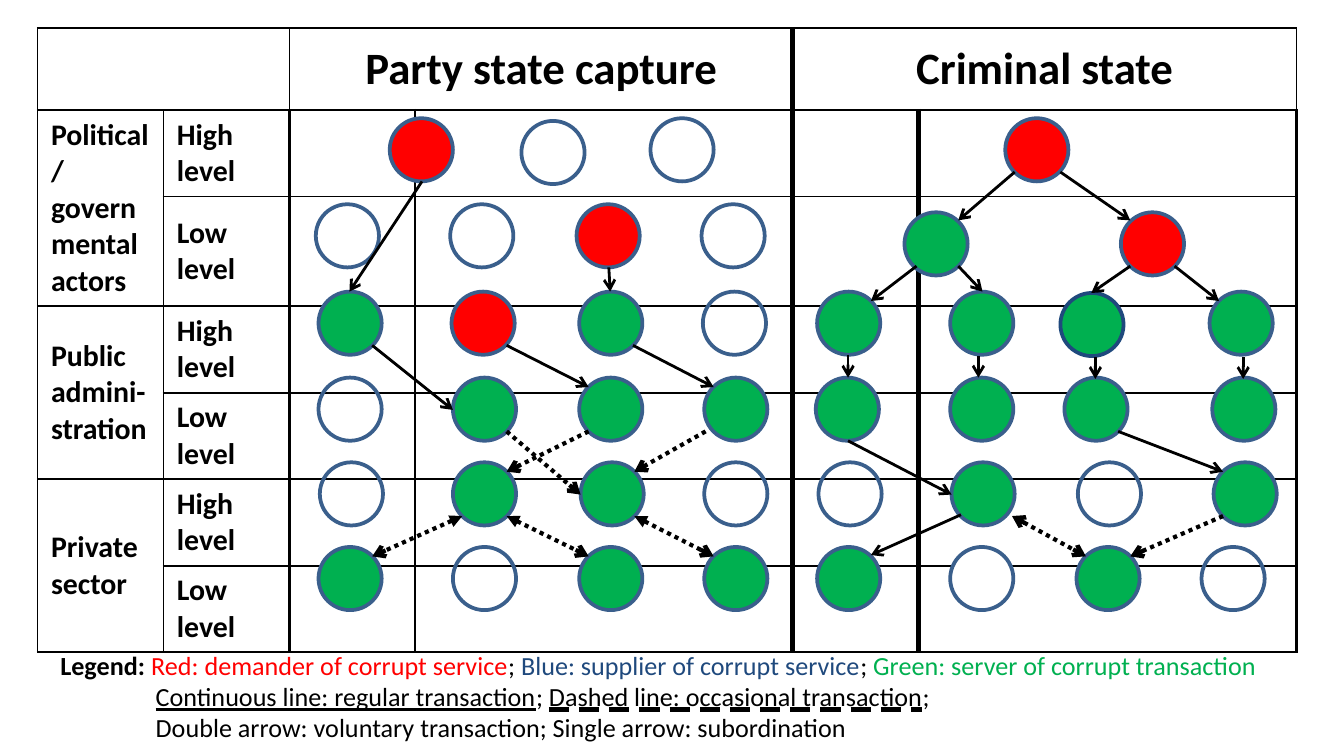
from pptx import Presentation
from pptx import util as u
from pptx.dml.color import RGBColor
from pptx.enum import dml, shapes, text
from pptx.oxml.ns import qn
from lxml import etree

PX = 9144
SLIDE = (1000, 562.5)
FONT = "Calibri"
NO_STYLE = "{2D5ABB26-0587-4C30-8999-92F81FD0307C}"
COLORS = {"black": "000000", "red": "FF0000", "green": "00B050", "white": "FFFFFF",
          "outline": "3A5F8C", "navy": "1F497D"}

TABLE = (28, 21, 937, 441)
ROW_HEIGHTS = [61] + [63] * 6
HEADERS = [(2, "Party state capture"), (6, "Criminal state")]
SECTORS = ["Political/governmental actors", "Public admini-stration", "Private sector"]
LEVELS = ["High level", "Low level"]

DIAMETER = 47
ACTORS = {
    "demander": ("red", "outline"),
    "server": ("green", "outline"),
    "dark server": ("green", "navy"),
    "inactive": (None, "outline"),
    "blank": ("white", "outline"),
}
CIRCLES = [
    (88, [(290, "demander"), (484, "inactive"), (748, "demander")]),
    (90, [(388, "inactive")]),
    (152, [(235, "inactive"), (335, "inactive"), (429, "demander"), (522, "inactive")]),
    (158, [(673, "server"), (834, "demander")]),
    (217, [(237, "server"), (336, "demander"), (431, "server"), (523, "inactive"),
           (608, "server"), (707, "server"), (900, "server")]),
    (218, [(789, "dark server")]),
    (281, [(237, "inactive"), (337, "server"), (431, "server"), (524, "server"),
           (607, "server"), (707, "server"), (792, "server"), (902, "server")]),
    (344, [(238, "inactive"), (337, "server"), (432, "server"), (524, "inactive"),
           (609, "inactive"), (708, "server"), (802, "inactive"), (903, "server")]),
    (407, [(237, "server"), (337, "inactive"), (431, "server"), (524, "server"),
           (608, "server"), (707, "blank"), (801, "server"), (894, "inactive")]),
]

REGULAR = {"width": 1.5, "dashed": False, "head": None}
OCCASIONAL = {"width": 2.25, "dashed": True, "head": None}
VOLUNTARY = {"width": 2.25, "dashed": True, "head": "triangle"}
VOLUNTARY_OPEN = {"width": 2.25, "dashed": True, "head": "arrow"}
ARROWS = [
    (REGULAR, [
        (314, 135, 260, 217), (453, 199, 454, 217), (277, 257, 337, 305),
        (377, 257, 438, 288), (471, 257, 531, 288), (755, 128, 713, 164),
        (789, 128, 841, 164), (682, 198, 648, 224), (713, 198, 731, 217),
        (841, 198, 812, 218), (874, 198, 907, 224), (631, 264, 631, 281),
        (728, 265, 728, 281), (815, 266, 815, 282), (925, 266, 925, 282),
        (631, 328, 708, 368), (832, 321, 910, 351), (715, 383, 648, 413)]),
    (OCCASIONAL, [
        (377, 321, 432, 368), (438, 321, 377, 351), (525, 321, 472, 351),
        (910, 384, 841, 414)]),
    (VOLUNTARY, [
        (344, 384, 277, 414), (377, 384, 438, 414), (472, 384, 531, 414)]),
    (VOLUNTARY_OPEN, [(753, 384, 808, 414)]),
]

LEGEND_BOX = (35, 478, 921, 81)
LEGEND_INDENT = 71
SOLID = text.MSO_UNDERLINE.SINGLE_LINE
DASHED = text.MSO_UNDERLINE.DASH_HEAVY_LINE
BREAK = None
LEGEND = [
    (0, [("Legend: ", "black", True, None),
         ("Red: demander of corrupt service", "red", False, None),
         ("; ", "black", False, None),
         ("Blue: supplier of corrupt service", "navy", False, None),
         ("; ", "black", False, None),
         ("Green: server of corrupt transaction", "green", False, None)]),
    (LEGEND_INDENT, [("Continuous line: regular transaction", "black", False, SOLID),
                     ("; ", "black", False, None),
                     ("Dashed line: occasional transaction", "black", False, DASHED),
                     (";", "black", False, None),
                     BREAK,
                     ("Double arrow: voluntary transaction; Single arrow: subordination",
                      "black", False, None)]),
]


def px(*values):
    return [round(value * PX) for value in values]


def rgb(name):
    return RGBColor.from_string(COLORS[name])


def add_run(paragraph, content, size, color="black", bold=True, underline=None):
    run = paragraph.add_run()
    run.text = content
    font = run.font
    font.name, font.size, font.bold = FONT, u.Pt(size), bold
    font.underline = underline
    font.color.rgb = rgb(color)


def set_border(cell, side, width):
    if not width:
        return
    line = etree.SubElement(cell._tc.get_or_add_tcPr(), qn(f"a:ln{side}"), w=str(u.Pt(width)))
    fill = etree.SubElement(line, qn("a:solidFill"))
    etree.SubElement(fill, qn("a:srgbClr"), val=COLORS["black"])


def vertical_width(row, edge):
    if row == 0:
        return {0: 1, 2: 1, 6: 3, 10: 1}.get(edge)
    return {0: 1, 1: 1, 2: 1.5, 6: 3, 10: 1.5}.get(edge)


def horizontal_width(edge, column):
    if edge in (2, 4, 6):
        return None if column == 0 else 1
    if edge == 0 or column < 2 and edge in (1, 7):
        return 1
    return 1.5


def fill_cell(cell, content, size, alignment=None):
    cell.vertical_anchor = text.MSO_ANCHOR.MIDDLE
    paragraph = cell.text_frame.paragraphs[0]
    paragraph.alignment = alignment
    add_run(paragraph, content, size)


def add_actor_table(slide):
    table = slide.shapes.add_table(7, 10, *px(*TABLE)).table
    table.first_row = table.horz_banding = False
    table._tbl.tblPr.find(qn("a:tableStyleId")).text = NO_STYLE
    for column in table.columns:
        column.width = px(TABLE[2] / 10)[0]
    for row, height in zip(table.rows, ROW_HEIGHTS):
        row.height = px(height)[0]
    table.cell(0, 0).merge(table.cell(0, 1))
    for column, title in HEADERS:
        table.cell(0, column).merge(table.cell(0, column + 3))
        fill_cell(table.cell(0, column), title, 24, text.PP_ALIGN.CENTER)
    for index, sector in enumerate(SECTORS):
        top = 1 + 2 * index
        table.cell(top, 0).merge(table.cell(top + 1, 0))
        fill_cell(table.cell(top, 0), sector, 16)
        for offset, level in enumerate(LEVELS):
            fill_cell(table.cell(top + offset, 1), level, 16)
    for row in range(7):
        for column in range(10):
            cell = table.cell(row, column)
            right = column + (cell.span_width if cell.is_merge_origin else 1)
            bottom = row + (cell.span_height if cell.is_merge_origin else 1)
            set_border(cell, "L", vertical_width(row, column))
            set_border(cell, "R", vertical_width(row, right))
            set_border(cell, "T", horizontal_width(row, column))
            set_border(cell, "B", horizontal_width(bottom, column))
            cell.fill.background()


def add_circle(slide, left, top, actor):
    fill, outline = ACTORS[actor]
    circle = slide.shapes.add_shape(shapes.MSO_SHAPE.OVAL, *px(left, top, DIAMETER, DIAMETER))
    circle.shadow.inherit = False
    if fill:
        circle.fill.solid()
        circle.fill.fore_color.rgb = rgb(fill)
    else:
        circle.fill.background()
    circle.line.color.rgb = rgb(outline)
    circle.line.width = u.Pt(2)


def add_arrow(slide, points, style):
    connector = slide.shapes.add_connector(shapes.MSO_CONNECTOR.STRAIGHT, *px(*points))
    connector.line.color.rgb = rgb("black")
    connector.line.width = u.Pt(style["width"])
    if style["dashed"]:
        connector.line.dash_style = dml.MSO_LINE.ROUND_DOT
    line = connector.line._get_or_add_ln()
    if style["head"]:
        etree.SubElement(line, qn("a:headEnd"), type=style["head"])
    etree.SubElement(line, qn("a:tailEnd"), type="arrow")
    etree.SubElement(connector._element.spPr, qn("a:effectLst"))


def add_legend(slide):
    frame = slide.shapes.add_textbox(*px(*LEGEND_BOX)).text_frame
    frame.word_wrap = True
    for index, (indent, runs) in enumerate(LEGEND):
        paragraph = frame.add_paragraph() if index else frame.paragraphs[0]
        paragraph._p.get_or_add_pPr().set("marL", str(px(indent)[0]))
        for run in runs:
            if run is BREAK:
                paragraph.add_line_break()
                continue
            content, color, bold, underline = run
            add_run(paragraph, content, 14, color, bold, underline)


presentation = Presentation()
presentation.slide_width, presentation.slide_height = px(*SLIDE)
slide = presentation.slides.add_slide(presentation.slide_layouts[6])
add_actor_table(slide)
for top, circles in CIRCLES:
    for left, actor in circles:
        add_circle(slide, left, top, actor)
for style, arrows in ARROWS:
    for points in arrows:
        add_arrow(slide, points, style)
add_legend(slide)
presentation.save("out.pptx")
